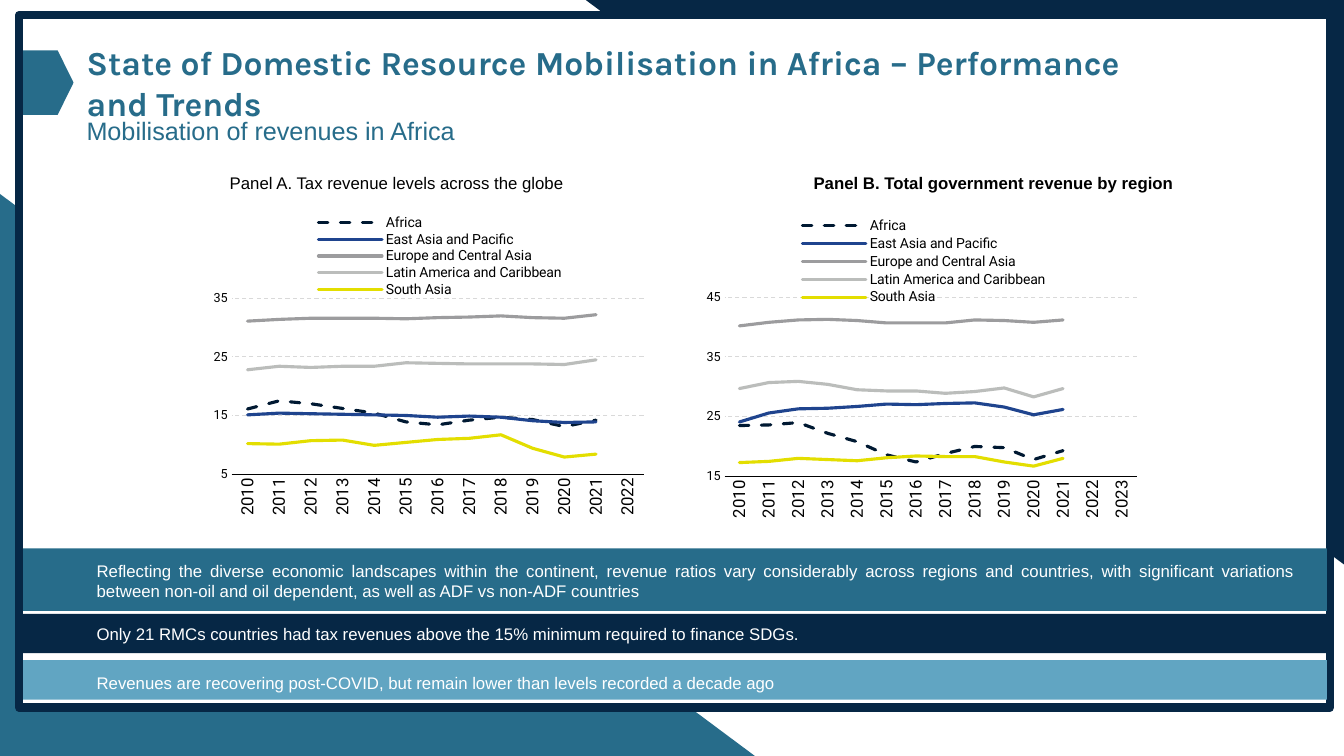
import pptx
import pptx.chart.data
import pptx.dml.color
import pptx.enum.chart
import pptx.enum.dml
import pptx.enum.shapes
import pptx.enum.text
import pptx.oxml
import pptx.oxml.ns
import pptx.util

RGBColor = pptx.dml.color.RGBColor
Shape = pptx.enum.shapes.MSO_SHAPE
Align = pptx.enum.text.PP_ALIGN
Dash = pptx.enum.dml.MSO_LINE
Pt = pptx.util.Pt
qn = pptx.oxml.ns.qn

NAVY = RGBColor(0x06, 0x27, 0x45)
TEAL = RGBColor(0x27, 0x6C, 0x8A)
SKY = RGBColor(0x61, 0xA5, 0xC2)
WHITE = RGBColor(0xFF, 0xFF, 0xFF)
BLACK = RGBColor(0, 0, 0)
GRID = RGBColor(0xD9, 0xD9, 0xD9)

EMU_PER_PX = 9144  # 100 px to the inch

# Region name, line colour, dash
REGIONS = [
    ("Africa", RGBColor(0x00, 0x19, 0x32), Dash.DASH),
    ("East Asia and Pacific", RGBColor(0x1F, 0x44, 0x8E), Dash.SOLID),
    ("Europe and Central Asia", RGBColor(0x9C, 0x9C, 0x9E), Dash.SOLID),
    ("Latin America and Caribbean", RGBColor(0xBB, 0xBD, 0xBB), Dash.SOLID),
    ("South Asia", RGBColor(0xE3, 0xDE, 0x00), Dash.SOLID),
]

# One row per region, 2010 to 2021
TAX_REVENUE = [
    [16.1, 17.5, 17, 16.2, 15.4, 13.9, 13.4, 14.2, 14.7, 14.3, 13.1, 14.2],
    [15.1, 15.4, 15.3, 15.2, 15.1, 15, 14.7, 14.9, 14.7, 14.1, 13.8, 13.9],
    [31.1, 31.4, 31.6, 31.6, 31.6, 31.5, 31.7, 31.8, 32, 31.7, 31.6, 32.2],
    [22.8, 23.4, 23.2, 23.4, 23.4, 24, 23.9, 23.8, 23.8, 23.8, 23.7, 24.5],
    [10.2, 10.1, 10.7, 10.8, 9.9, 10.4, 10.9, 11.1, 11.7, 9.4, 7.9, 8.4],
]
TOTAL_REVENUE = [
    [23.5, 23.6, 24, 22.2, 20.8, 18.6, 17.4, 18.8, 20, 19.8, 17.8, 19.3],
    [24.1, 25.6, 26.3, 26.4, 26.7, 27.1, 27, 27.2, 27.3, 26.6, 25.3, 26.2],
    [40.2, 40.8, 41.2, 41.3, 41.1, 40.7, 40.7, 40.7, 41.2, 41.1, 40.8, 41.2],
    [29.7, 30.7, 30.9, 30.4, 29.5, 29.3, 29.3, 28.9, 29.2, 29.8, 28.3, 29.7],
    [17.3, 17.5, 18, 17.8, 17.6, 18.1, 18.4, 18.3, 18.3, 17.4, 16.7, 18],
]

# Bar top, bar height, text top, text height, colour, wording
MESSAGES = [
    (544, 62, 551, 50, TEAL,
     "Reflecting the diverse economic landscapes within the continent, revenue ratios vary "
     "considerably across regions and countries, with significant variations between non-oil "
     "and oil dependent, as well as ADF vs non-ADF countries"),
    (609, 39, 614, 30, NAVY,
     "Only 21 RMCs countries had tax revenues above the 15% minimum required to finance SDGs."),
    (655, 39, 662, 30, SKY,
     "Revenues are recovering post-COVID, but remain lower than levels recorded a decade ago"),
]


def px(*lengths):
    return [pptx.util.Emu(length * EMU_PER_PX) for length in lengths]


def set_font(font, size, color, name="Arial", bold=False):
    font.size, font.name, font.bold = Pt(size), name, bold
    font.color.rgb = color


def add_block(page, kind, place, fill):
    block = page.shapes.add_shape(kind, *px(*place))
    block.shadow.inherit = False
    block.fill.solid()
    block.fill.fore_color.rgb = fill
    block.line.fill.background()
    return block


def write(box, wording, size, color, name="Arial", bold=False, align=Align.LEFT):
    frame = box.text_frame
    frame.word_wrap = True
    frame.auto_size = pptx.enum.text.MSO_AUTO_SIZE.NONE
    frame.vertical_anchor = pptx.enum.text.MSO_ANCHOR.TOP
    para = frame.paragraphs[0]
    para.alignment = align
    span = para.add_run()
    span.text = wording
    set_font(span.font, size, color, name, bold)


def add_text(page, place, wording, size, color, **style):
    write(page.shapes.add_textbox(*px(*place)), wording, size, color, **style)


def place_part(parent, after, inner, x, y, width, height):
    """Give a chart part a fixed place, as fractions of the chart."""
    target = '<c:layoutTarget val="inner"/>' if inner else ""
    layout = pptx.oxml.parse_xml(
        f'<c:layout {pptx.oxml.ns.nsdecls("c")}><c:manualLayout>{target}'
        '<c:xMode val="edge"/><c:yMode val="edge"/>'
        f'<c:x val="{x}"/><c:y val="{y}"/><c:w val="{width}"/><c:h val="{height}"/>'
        '</c:manualLayout></c:layout>')
    for old in parent.findall(qn("c:layout")):
        parent.remove(old)
    if after is None:
        parent.insert(0, layout)
    else:
        parent.find(qn(after)).addnext(layout)


def style_axes(chart, low, high):
    years, values = chart.category_axis, chart.value_axis
    for axis, size in ((years, 12), (values, 9)):
        axis.major_tick_mark = axis.minor_tick_mark = pptx.enum.chart.XL_TICK_MARK.NONE
        set_font(axis.tick_labels.font, size, BLACK, "Roboto")
    years.format.line.color.rgb = BLACK
    years.format.line.width = Pt(0.75)
    years._element.find(qn("c:txPr")).find(qn("a:bodyPr")).set("rot", "-5400000")
    values.minimum_scale, values.maximum_scale, values.major_unit = low, high, 10
    values.tick_labels.number_format = "0"
    values.tick_labels.number_format_is_linked = False
    values.format.line.fill.background()
    grid = values.major_gridlines.format.line
    grid.color.rgb, grid.width, grid.dash_style = GRID, Pt(0.75), Dash.DASH


def add_revenue_chart(page, place, last_year, rows, low, high, plot, legend):
    data = pptx.chart.data.CategoryChartData()
    data.categories = [str(year) for year in range(2010, last_year + 1)]
    gaps = [None] * (last_year - 2021)
    for (region, _, _), row in zip(REGIONS, rows):
        data.add_series(region, row + gaps)
    chart = page.shapes.add_chart(
        pptx.enum.chart.XL_CHART_TYPE.LINE, *px(*place), data).chart
    chart.has_title = False
    set_font(chart.font, 10, BLACK, "Roboto")
    style_axes(chart, low, high)

    for series, (_, color, dash) in zip(chart.plots[0].series, REGIONS):
        series.smooth = False
        line = series.format.line
        line.color.rgb, line.width, line.dash_style = color, Pt(2.25), dash
        series._element.find(qn("c:spPr")).find(qn("a:ln")).set("cap", "rnd")

    chart.has_legend = True
    chart.legend.position = pptx.enum.chart.XL_LEGEND_POSITION.TOP
    chart.legend.include_in_layout = False
    set_font(chart.legend.font, 10, BLACK, "Roboto")
    place_part(chart.legend._element, "c:legendPos", False, *legend)
    place_part(chart._chartSpace.chart.plotArea, None, True, *plot)


def main():
    deck = pptx.Presentation()
    deck.slide_width, deck.slide_height = px(1333, 750)
    page = deck.slides.add_slide(deck.slide_layouts[5])

    # Corner triangles and framed panel
    add_block(page, Shape.RIGHT_TRIANGLE, (581, 0, 752, 560), NAVY).rotation = 180
    add_block(page, Shape.RIGHT_TRIANGLE, (-2, 191, 752, 560), TEAL)
    panel = add_block(page, Shape.RECTANGLE, (19, 15, 1300, 687), WHITE)
    panel.line.color.rgb = NAVY
    panel.line.width = Pt(6)

    # Heading, with the title brought in front of the panel
    add_block(page, Shape.PENTAGON, (23, 50, 50, 64), TEAL).adjustments[0] = 0.315
    title = page.shapes.title
    title._element.getparent().append(title._element)
    title.left, title.top, title.width, title.height = px(76, 37, 1065, 91)
    write(title, "State of Domestic Resource Mobilisation in Africa – Performance and Trends",
          24, TEAL, name="Karla", bold=True)
    add_text(page, (76, 109, 458, 40), "Mobilisation of revenues in Africa", 18, TEAL)

    # Key messages
    for top, height, text_top, text_height, color, wording in MESSAGES:
        add_block(page, Shape.RECTANGLE, (23, top, 1293, height), color)
        add_text(page, (86, text_top, 1209, text_height), wording, 12, WHITE,
                 align=Align.JUSTIFY)

    # Charts and their headings
    add_revenue_chart(page, (198, 212, 454, 323), 2022, TAX_REVENUE, 5, 35,
                      (0.07, 0.26, 0.9, 0.54), (0.25, 0, 0.55, 0.26))
    add_revenue_chart(page, (687, 211, 454, 323), 2023, TOTAL_REVENUE, 15, 45,
                      (0.07, 0.26, 0.9, 0.55), (0.23, 0.01, 0.55, 0.28))
    add_text(page, (218, 166, 419, 30), "Panel A. Tax revenue levels across the globe", 12, BLACK)
    add_text(page, (797, 166, 419, 30), "Panel B. Total government revenue by region", 12, BLACK,
             bold=True)

    deck.save("out.pptx")


if __name__ == "__main__":
    main()
